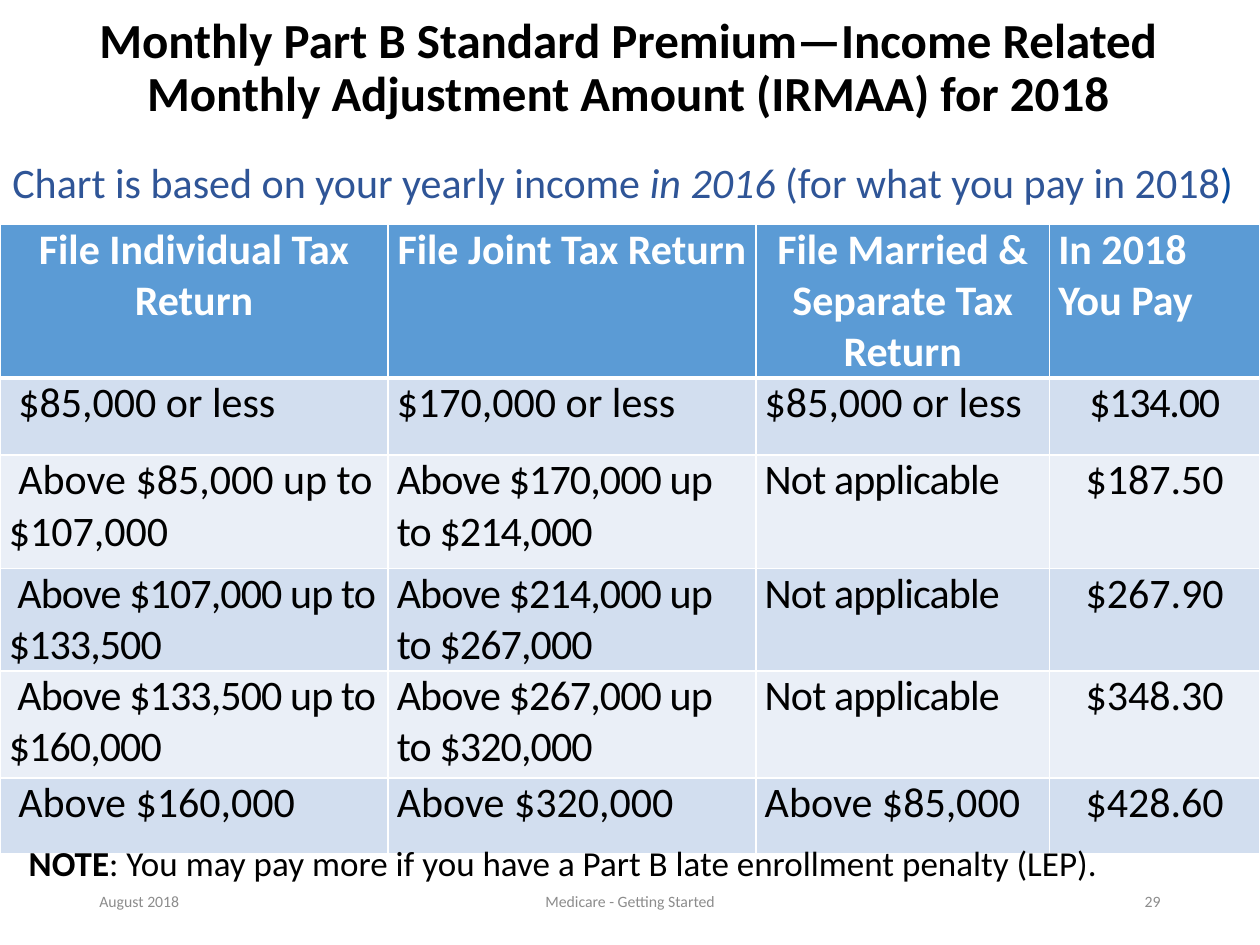
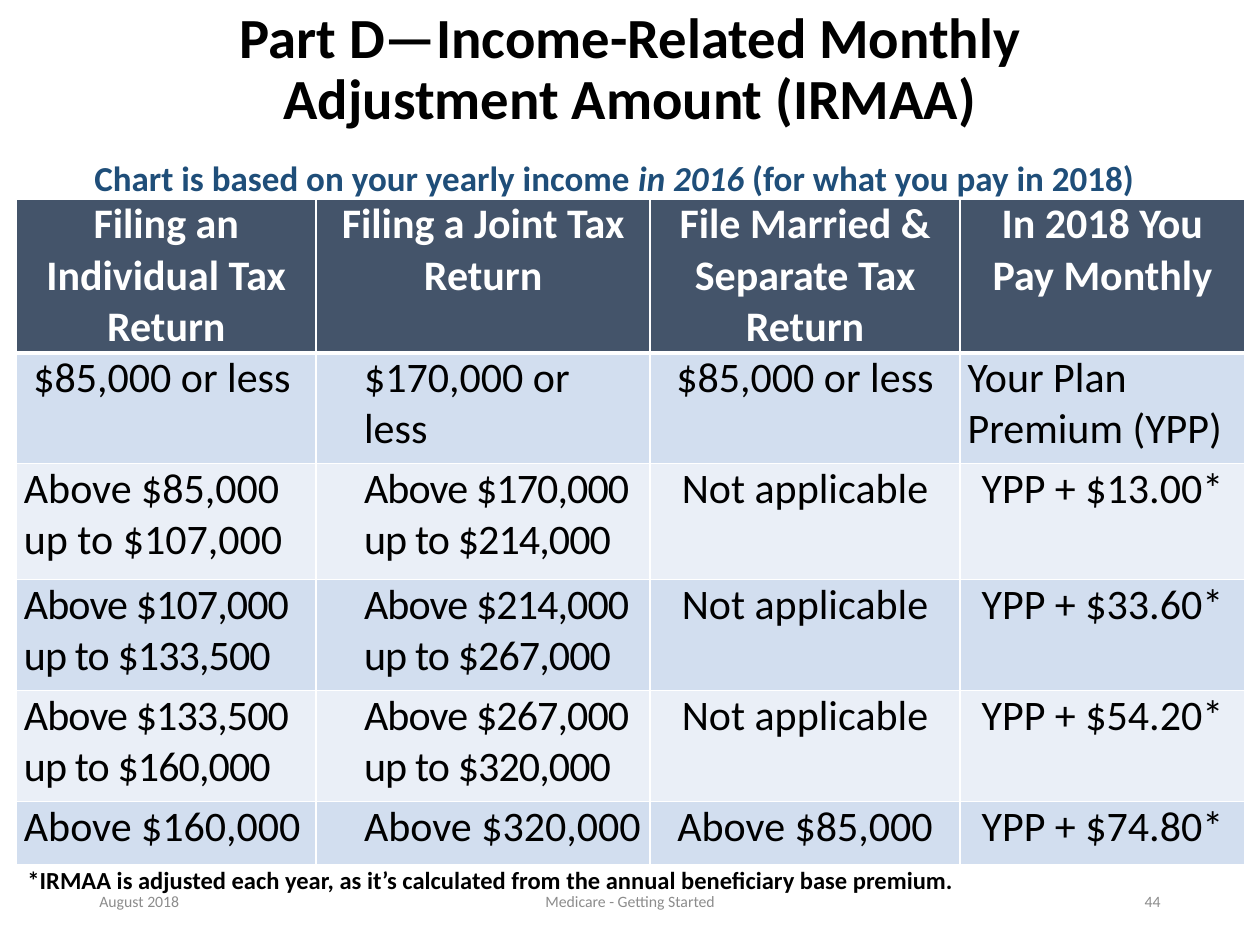
from dataclasses import dataclass, field

from lxml import etree
from pptx import Presentation
from pptx.dml.color import RGBColor
from pptx.enum import text
from pptx.oxml import ns
from pptx.util import Emu, Pt

# Shared style: lengths are px, 100 to the inch
EMU_PER_PX = 9144
FONT = "Calibri"
COLORS = {
    "black": "000000",
    "white": "FFFFFF",
    "footer": "8C8C8C",
    "part_b_header": "5B9BD5",
    "part_d_header": "44546A",
    "band_dark": "D2DEEF",
    "band_light": "EAEFF7",
    "part_b_basis": "2F5597",
    "part_b_bracket": "084A9C",
    "part_d_basis": "1F4E79",
}
LEFT, CENTER, RIGHT = (text.PP_ALIGN.LEFT, text.PP_ALIGN.CENTER,
                       text.PP_ALIGN.RIGHT)
TOP, MIDDLE = text.MSO_ANCHOR.TOP, text.MSO_ANCHOR.MIDDLE
FOOTER_TOP, FOOTER_HEIGHT = 695, 40


@dataclass
class Span:
    words: str
    color: str = "black"
    bold: bool = False
    italic: bool = False


@dataclass
class Line:
    """One line of text in its own box."""
    place: tuple[int, int, int, int]
    size: float
    spans: list[Span]
    align: int = LEFT
    anchor: int = TOP


@dataclass
class Column:
    heading: str
    width: int
    align: int = LEFT
    heading_align: int = CENTER
    indent: int = 0


@dataclass
class PremiumTable:
    left: int
    top: int
    inset: int
    header_color: str
    columns: list[Column]
    heights: list[int]
    rows: list[list[str]]
    # First matching phrase gives the letter spacing in hundredths of a point
    spacing: dict[str, int]
    left_aligned: list[str] = field(default_factory=list)


@dataclass
class PremiumPage:
    title: str
    title_place: tuple[int, int, int, int]
    title_size: float
    table: PremiumTable
    lines: list[Line]
    number: int


def px(length: int) -> Emu:
    return Emu(length * EMU_PER_PX)


def rgb(name: str) -> RGBColor:
    return RGBColor.from_string(COLORS[name])


def format_run(run, size: float, color: str, bold=False, italic=False) -> None:
    run.font.name = FONT
    run.font.size = Pt(size)
    run.font.color.rgb = rgb(color)
    run.font.bold = bold
    run.font.italic = italic


def draw_line(page, line: Line) -> None:
    box = page.shapes.add_textbox(*map(px, line.place))
    frame = box.text_frame
    frame.word_wrap = True
    frame.vertical_anchor = line.anchor
    para = frame.paragraphs[0]
    para.alignment = line.align
    for span in line.spans:
        run = para.add_run()
        run.text = span.words
        format_run(run, line.size, span.color, span.bold, span.italic)


def draw_title(page, spec: PremiumPage) -> None:
    title = page.shapes.title
    title.left, title.top, title.width, title.height = map(px, spec.title_place)
    frame = title.text_frame
    frame.text = spec.title
    frame.auto_size = text.MSO_AUTO_SIZE.NONE
    frame.vertical_anchor = MIDDLE
    para = frame.paragraphs[0]
    para.alignment = CENTER
    para.line_spacing = 0.9
    format_run(para.runs[0], spec.title_size, "black", bold=True)


def draw_borders(cell, row: int) -> None:
    """White rules, with a heavy one between header and body."""
    heavy_edge = {0: "lnB", 1: "lnT"}.get(row)
    properties = cell._tc.get_or_add_tcPr()
    for edge in ("lnL", "lnR", "lnT", "lnB"):
        width = Pt(3 if edge == heavy_edge else 1)
        rule = etree.SubElement(properties, ns.qn(f"a:{edge}"), w=str(width))
        fill = etree.SubElement(rule, ns.qn("a:solidFill"))
        etree.SubElement(fill, ns.qn("a:srgbClr"), val=COLORS["white"])


def fill_cell(cell, row: int, words: str, column: Column,
              spec: PremiumTable) -> None:
    is_header = row == 0
    draw_borders(cell, row)
    cell.fill.solid()
    band = "band_dark" if row % 2 else "band_light"
    cell.fill.fore_color.rgb = rgb(spec.header_color if is_header else band)
    cell.margin_left = cell.margin_right = px(spec.inset)
    cell.margin_top = cell.margin_bottom = 0
    cell.text_frame.text = words
    para = cell.text_frame.paragraphs[0]
    para.alignment = column.heading_align if is_header else column.align
    if words in spec.left_aligned:
        para.alignment = LEFT
    if column.indent and not is_header:
        para._p.get_or_add_pPr().set("marL", str(px(column.indent)))
    run = para.runs[0]
    format_run(run, 24, "white" if is_header else "black", bold=is_header)
    spacing = next((value for phrase, value in spec.spacing.items()
                    if phrase in words), 0)
    if spacing:
        run.font._element.set("spc", str(spacing))


def draw_table(page, spec: PremiumTable) -> None:
    contents = [[column.heading for column in spec.columns], *spec.rows]
    width = sum(column.width for column in spec.columns)
    table = page.shapes.add_table(
        len(contents), len(spec.columns), px(spec.left), px(spec.top),
        px(width), px(sum(spec.heights))).table
    for index, column in enumerate(spec.columns):
        table.columns[index].width = px(column.width)
    for row, (height, entries) in enumerate(zip(spec.heights, contents)):
        table.rows[row].height = px(height)
        for index, (words, column) in enumerate(zip(entries, spec.columns)):
            fill_cell(table.cell(row, index), row, words, column, spec)


def draw_footer(page, number: int) -> None:
    for left, width, words, align in (
            (69, 225, "August 2018", LEFT),
            (331, 338, "Medicare - Getting Started", CENTER),
            (706, 225, str(number), RIGHT)):
        draw_line(page, Line((left, FOOTER_TOP, width, FOOTER_HEIGHT), 9,
                             [Span(words, "footer")], align, MIDDLE))


def draw_page(deck, spec: PremiumPage) -> None:
    page = deck.slides.add_slide(deck.slide_layouts[5])
    draw_title(page, spec)
    draw_table(page, spec.table)
    for line in spec.lines:
        draw_line(page, line)
    draw_footer(page, spec.number)


def basis_spans(color: str, bold: bool, ending: str) -> list[Span]:
    return [Span("Chart is based on your yearly income ", color, bold),
            Span("in 2016 ", color, bold, italic=True),
            Span(ending, color, bold)]


# Part B premiums
PART_B = PremiumPage(
    title="Monthly Part B Standard Premium—Income Related "
          "Monthly Adjustment Amount (IRMAA) for 2018",
    title_place=(12, 0, 973, 109),
    title_size=28,
    table=PremiumTable(
        left=0, top=178, inset=7, header_color="part_b_header",
        columns=[
            Column("File Individual Tax Return", 308),
            Column("File Joint Tax Return", 292),
            Column("File Married & Separate Tax Return", 233),
            Column("In 2018 You Pay", 167, CENTER, LEFT),
        ],
        heights=[80, 61, 90, 76, 85, 60],
        rows=[
            [" $85,000 or less", "$170,000 or less", "$85,000 or less",
             "$134.00"],
            [" Above $85,000 up to $107,000", "Above $170,000 up to $214,000",
             "Not applicable", "$187.50"],
            [" Above $107,000 up to $133,500", "Above $214,000 up to $267,000",
             "Not applicable", "$267.90"],
            [" Above $133,500 up to $160,000", "Above $267,000 up to $320,000",
             "Not applicable", "$348.30"],
            [" Above $160,000", "Above $320,000", "Above $85,000", "$428.60"],
        ],
        spacing={"$85,000 up": 0, " up to ": -50, "Not applicable": -50,
                 "$134.00": -70},
    ),
    lines=[
        Line((0, 119, 1000, 50), 24,
             [*basis_spans("part_b_basis", False, "(for what you pay in 2018"),
              Span(")", "part_b_bracket")]),
        Line((13, 663, 973, 44), 20,
             [Span("NOTE", bold=True),
              Span(": You may pay more if you have a Part B late enrollment "
                   "penalty (LEP).")]),
    ],
    number=29,
)

# Part D adjustment
PART_D = PremiumPage(
    title="Part D—Income-Related Monthly Adjustment Amount (IRMAA)",
    title_place=(69, 0, 862, 112),
    title_size=32.4,
    table=PremiumTable(
        left=13, top=158, inset=6, header_color="part_d_header",
        columns=[
            Column("Filing an Individual Tax Return", 238),
            Column("Filing a Joint Tax Return", 265, indent=32),
            Column("File Married & Separate Tax Return", 246, CENTER),
            Column("In 2018 You Pay Monthly", 226, CENTER),
        ],
        heights=[95, 88, 92, 88, 88, 50],
        rows=[
            [" $85,000 or less", "$170,000 or less", "$85,000 or less",
             "Your Plan Premium (YPP)"],
            ["Above $85,000 up to $107,000", "Above $170,000 up to $214,000",
             "Not applicable", "YPP + $13.00*"],
            ["Above $107,000 up to $133,500", "Above $214,000 up to $267,000",
             "Not applicable", "YPP + $33.60*"],
            ["Above $133,500 up to $160,000", "Above $267,000 up to $320,000",
             "Not applicable", "YPP + $54.20*"],
            ["Above $160,000", "Above $320,000", "Above $85,000",
             "YPP + $74.80*"],
        ],
        spacing={"$85,000 up": 0, " up to ": -50},
        left_aligned=["Your Plan Premium (YPP)"],
    ),
    lines=[
        Line((12, 682, 760, 34), 14,
             [Span("*IRMAA is adjusted each year, as it’s calculated from the "
                   "annual beneficiary base premium.", bold=True)]),
        Line((13, 119, 949, 44), 20,
             basis_spans("part_d_basis", True, "(for what you pay in 2018)"),
             CENTER),
    ],
    number=44,
)


def main() -> None:
    deck = Presentation()
    deck.slide_width, deck.slide_height = px(1000), px(750)
    for spec in (PART_B, PART_D):
        draw_page(deck, spec)
    deck.save("out.pptx")


if __name__ == "__main__":
    main()
